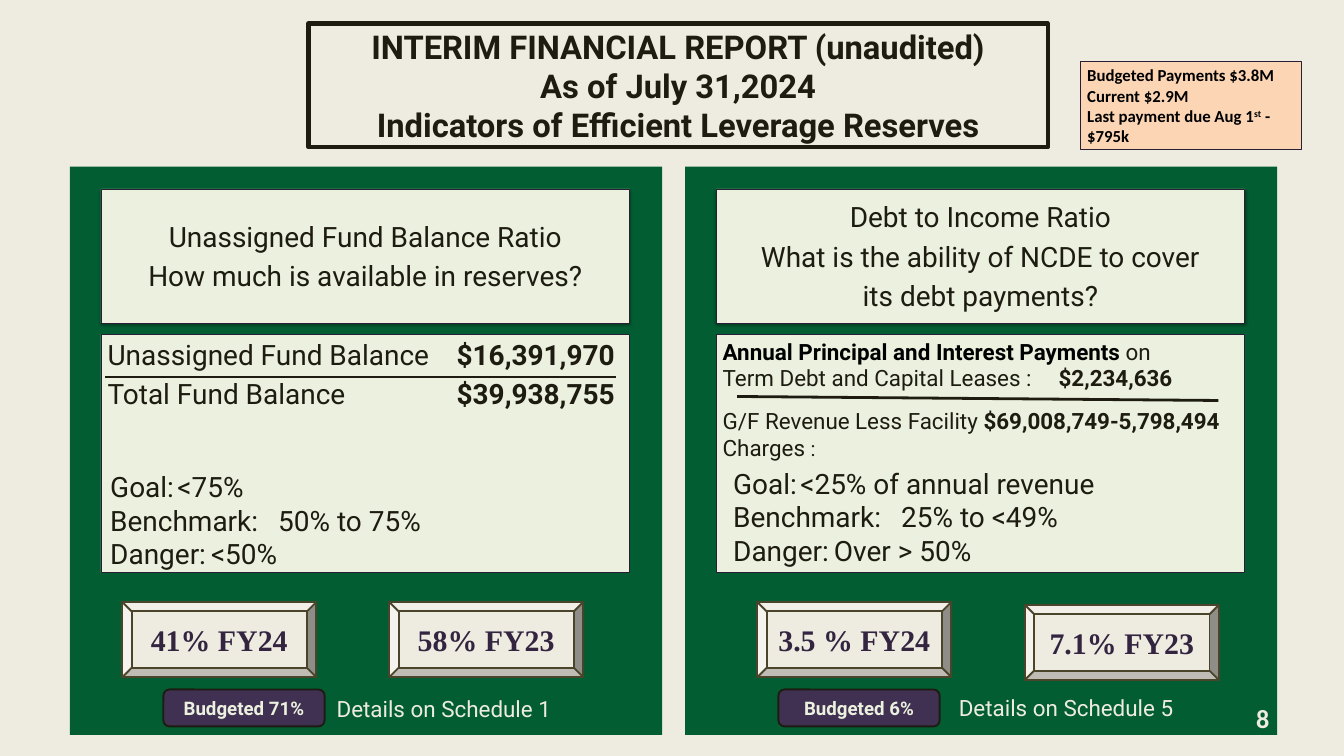
import pptx
import pptx.dml.color
import pptx.enum.shapes
import pptx.enum.text
import pptx.oxml.ns
import pptx.util
from lxml import etree

Pt = pptx.util.Pt
RGBColor = pptx.dml.color.RGBColor
SHAPE = pptx.enum.shapes.MSO_SHAPE
ALIGN = pptx.enum.text.PP_ALIGN
ANCHOR = pptx.enum.text.MSO_ANCHOR
qn = pptx.oxml.ns.qn

CREAM = RGBColor(0xEE, 0xEC, 0xE1)
GREEN = RGBColor(0x02, 0x5E, 0x32)
INK = RGBColor(0x1E, 0x1C, 0x11)
BLACK = RGBColor(0, 0, 0)
PALE = RGBColor(0xEB, 0xF1, 0xDE)
CARD_EDGE = RGBColor(0x29, 0x1F, 0x35)
BEVEL_EDGE = RGBColor(0x4A, 0x45, 0x2A)
PLUM = RGBColor(0x33, 0x24, 0x40)
PURPLE = RGBColor(0x40, 0x31, 0x52)
PEACH = RGBColor(0xFC, 0xD5, 0xB5)
COLUMN_STEP = 659


def place(shape, left, top, width, height):
    """Move and size a shape, in points."""
    shape.left, shape.top = Pt(left), Pt(top)
    shape.width, shape.height = Pt(width), Pt(height)


def prepare_frame(shape, anchor=ANCHOR.TOP, inset=None):
    """Set wrapping, anchor and insets, and return the text frame."""
    frame = shape.text_frame
    frame.word_wrap = True
    frame.auto_size = pptx.enum.text.MSO_AUTO_SIZE.NONE
    frame.vertical_anchor = anchor
    if inset is not None:
        frame.margin_left = frame.margin_right = Pt(inset)
        frame.margin_top = frame.margin_bottom = Pt(inset)
    return frame


def add_box(slide, kind, bounds, fill, edge=None, weight=0.75):
    """Add a filled preset shape without a shadow."""
    box = slide.shapes.add_shape(kind, *map(Pt, bounds))
    box.shadow.inherit = False
    box.fill.solid()
    box.fill.fore_color.rgb = fill
    if edge is None:
        box.line.fill.background()
    else:
        box.line.color.rgb = edge
        box.line.width = Pt(weight)
    return box


def add_line(frame, align=ALIGN.LEFT, before=0, tab=None):
    """Start a paragraph, with an optional tab stop."""
    first = frame.paragraphs[0]
    paragraph = frame.add_paragraph() if first.runs else first
    paragraph.alignment = align
    paragraph.space_before = Pt(before)
    if tab:
        properties = paragraph._p.get_or_add_pPr()
        stops = etree.SubElement(properties, qn("a:tabLst"))
        etree.SubElement(stops, qn("a:tab"), pos=str(Pt(tab)), algn="l")
    return paragraph


def add_run(paragraph, text, size, color=INK, bold=False, font="Roboto"):
    """Add one formatted run."""
    run = paragraph.add_run()
    run.text = text
    run.font.size = Pt(size)
    run.font.color.rgb = color
    run.font.bold = bold
    run.font.name = font
    return run


def add_label(slide, bounds, text, size, color, bold=False, font="Roboto",
              align=ALIGN.LEFT, inset=None):
    """Add a text box of one run."""
    label = slide.shapes.add_textbox(*map(Pt, bounds))
    add_run(add_line(prepare_frame(label, inset=inset), align), text, size, color, bold, font)


def add_rule(slide, start, end):
    """Add the fraction line between two amounts."""
    rule = slide.shapes.add_connector(
        pptx.enum.shapes.MSO_CONNECTOR.STRAIGHT, *map(Pt, start + end))
    rule.line.color.rgb = INK
    rule.line.width = Pt(3)
    etree.SubElement(rule.element.spPr, qn("a:effectLst"))


def add_question(slide, left, lines):
    """Add a shadowed card that names the ratio and its question."""
    card = add_box(slide, SHAPE.RECTANGLE, (left, 202.5, 566.6, 143.5), PALE, CARD_EDGE)
    effects = card.element.spPr.find(qn("a:effectLst"))
    shadow = etree.SubElement(effects, qn("a:outerShdw"), blurRad=str(Pt(3.1)),
                              dist=str(Pt(1.8)), dir="5400000", rotWithShape="0")
    tint = etree.SubElement(shadow, qn("a:srgbClr"), val="000000")
    etree.SubElement(tint, qn("a:alpha"), val="35000")
    frame = prepare_frame(card, ANCHOR.MIDDLE)
    for line in lines:
        add_run(add_line(frame, ALIGN.CENTER, before=6), line, 30)


def add_amounts(slide, left):
    """Add the card that holds the amounts and return its text frame."""
    card = add_box(slide, SHAPE.RECTANGLE, (left, 358.3, 566.6, 255), PALE, CARD_EDGE)
    return prepare_frame(card)


def add_centered(slide, kind, bounds, text, fill, edge, size, color, font):
    """Add a button with bold text in its middle."""
    button = add_box(slide, kind, bounds, fill, edge, 2)
    frame = prepare_frame(button, ANCHOR.MIDDLE)
    add_run(add_line(frame, ALIGN.CENTER), text, size, color, True, font)


def fill_title(title, lines):
    """Write the framed report title."""
    place(title, 330.5, 25.2, 792, 132.5)
    title.line.color.rgb = INK
    title.line.width = Pt(4.5)
    paragraph = add_line(prepare_frame(title, ANCHOR.MIDDLE, 0), ALIGN.CENTER)
    for index, line in enumerate(lines):
        if index:
            paragraph.add_line_break()
        add_run(paragraph, line, 35.1, bold=True)


def fill_targets(targets, bounds, rows):
    """Write the target levels in a body placeholder, above the cards."""
    place(targets, *bounds)
    frame = prepare_frame(targets)
    for name, level, tab in rows:
        paragraph = add_line(frame, tab=tab)
        properties = paragraph._p.get_or_add_pPr()
        properties.set("marL", "0")
        properties.set("indent", "0")
        properties.find(qn("a:tabLst")).addprevious(etree.Element(qn("a:buNone")))
        add_run(paragraph, f"{name}:\t{level}", 30)
    targets.element.getparent().append(targets.element)


def add_note(slide):
    """Add the note on payments."""
    note = add_box(slide, SHAPE.RECTANGLE, (1157.8, 66.2, 236.9, 94.3), PEACH, CARD_EDGE)
    frame = prepare_frame(note)
    for runs in (["Budgeted Payments $3.8M"], ["Current $2.9M"],
                 ["Last payment due Aug 1", "st", " - $795k"]):
        paragraph = add_line(frame)
        for text in runs:
            run = add_run(paragraph, text, 18, BLACK, True, "Calibri")
            if text == "st":
                run._r.get_or_add_rPr().set("baseline", "30000")


def main():
    """Build the slide on leverage indicators."""
    deck = pptx.Presentation()
    deck.slide_width, deck.slide_height = Pt(1440), Pt(810)
    slide = deck.slides.add_slide(deck.slide_layouts[3])
    slide.background.fill.solid()
    slide.background.fill.fore_color.rgb = CREAM
    title, fund_targets, debt_targets = slide.placeholders

    fill_title(title, ["INTERIM FINANCIAL REPORT (unaudited)", "As of July 31,2024",
                       "Indicators of Efficient Leverage Reserves"])
    columns = [
        (["Unassigned Fund Balance Ratio", "How much is available in reserves?"],
         "Budgeted 71%"),
        (["Debt to Income Ratio", "What is the ability of NCDE to cover",
          "its debt payments?"], "Budgeted 6%"),
    ]
    amounts = []
    for column, (question, budget) in enumerate(columns):
        shift = column * COLUMN_STEP
        add_box(slide, SHAPE.RECTANGLE, (75 + shift, 178.5, 634.4, 609), GREEN)
        add_question(slide, 108.2 + shift, question)
        amounts.append(add_amounts(slide, 108.2 + shift))
        add_centered(slide, SHAPE.ROUNDED_RECTANGLE, (175 + shift, 738.7, 172.8, 39.6),
                     budget, PURPLE, INK, 20, PALE, "Roboto")

    fund, debt = amounts
    for name, amount in (("Unassigned Fund Balance", "$16,391,970"),
                         ("Total Fund Balance", "$39,938,755")):
        row = add_line(fund, before=6, tab=374)
        add_run(row, f"{name}\t", 30)
        add_run(row, amount, 30, bold=True)

    payments = add_line(debt)
    add_run(payments, "Annual Principal and Interest Payments ", 24, BLACK, True)
    add_run(payments, "on", 24)
    leases = add_line(debt, tab=360)
    add_run(leases, "Term Debt and Capital Leases :\t", 24)
    add_run(leases, "$2,234,636", 24, bold=True)
    revenue = add_line(debt, before=17, tab=142)
    add_run(revenue, "G/F Revenue\tLess Facility ", 24)
    add_run(revenue, "$69,008,749-5,798,494", 24, bold=True)
    charges = add_line(debt)
    add_run(charges, "Charges ", 24)
    add_run(charges, ":", 22)

    for left, top, ratio in ((131, 645, "41% FY24"), (417, 645, "58% FY23"),
                             (811.4, 645, "3.5 % FY24"), (1098, 648, "7.1% FY23")):
        add_centered(slide, SHAPE.BEVEL, (left, top, 208, 80.6), ratio,
                     CREAM, BEVEL_EDGE, 32, PLUM, "Times New Roman")

    add_label(slide, (353.5, 741.6, 250.6, 36), "Details on Schedule 1", 24, CREAM)
    add_label(slide, (1020.2, 740.2, 275.8, 36), "Details on Schedule 5", 24, CREAM)
    add_rule(slide, (113, 404), (659.5, 404))
    add_rule(slide, (789.8, 424.8), (1305.4, 429.1))
    fill_targets(fund_targets, (110.9, 499.7, 566.6, 116.6),
                 [("Goal", "<75%", 230), ("Benchmark", "50% to 75%", 230),
                  ("Danger", "<50%", 230)])
    fill_targets(debt_targets, (778.3, 496, 540, 116.6),
                 [("Goal", "<25% of annual revenue", 181),
                  ("Benchmark", "25% to <49%", 196), ("Danger", "Over > 50%", 196)])
    add_label(slide, (1329.8, 752.4, 30.2, 33.8), "8", 28, CREAM, True, "Calibri",
              ALIGN.RIGHT, 0)
    add_note(slide)
    deck.save("out.pptx")


if __name__ == "__main__":
    main()
